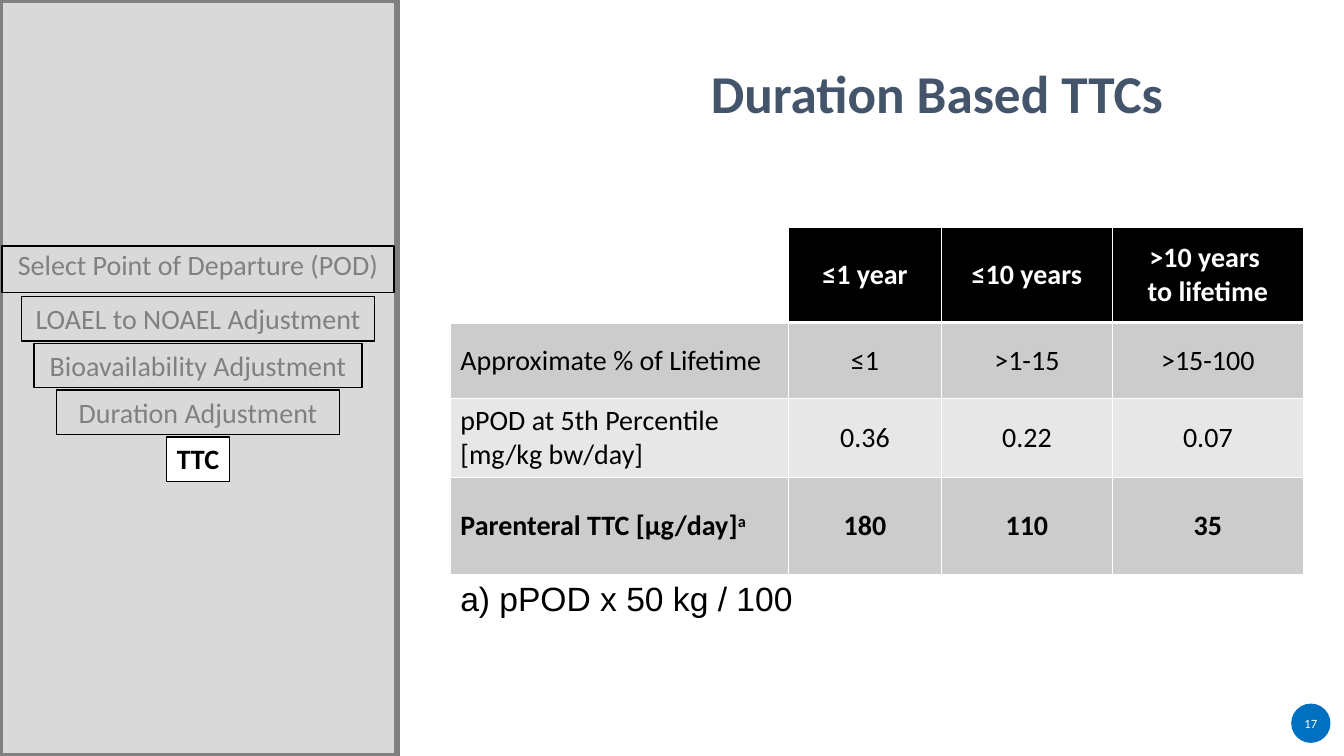
"""Build the slide on duration based TTCs with its step sidebar and table."""
import dataclasses

import lxml.etree
import pptx
import pptx.dml.color
import pptx.enum.shapes
import pptx.enum.text
import pptx.oxml.ns
import pptx.util

Cm = pptx.util.Cm
Pt = pptx.util.Pt
SHAPES = pptx.enum.shapes.MSO_SHAPE
ALIGN = pptx.enum.text.PP_ALIGN
ANCHOR = pptx.enum.text.MSO_ANCHOR


@dataclasses.dataclass(frozen=True)
class Theme:
    font: str = "Calibri"
    note_font: str = "Arial"
    title_size: float = 38
    text_size: float = 20
    note_size: float = 24
    badge_size: float = 9
    title: str = "44546A"
    badge: str = "0070C0"
    sidebar: str = "D9D9D9"
    muted: str = "808080"
    black: str = "000000"
    white: str = "FFFFFF"
    bands: tuple = ("CCCCCC", "E7E7E7")


THEME = Theme()
SIDEBAR_CENTRE = 4.99
FIRST_STEP = ("Select Point of Departure (POD)", 9.88)
LATER_STEPS = [
    ("LOAEL to NOAEL Adjustment", 8.89),
    ("Bioavailability Adjustment", 8.26),
    ("Duration Adjustment", 7.14),
]
COLUMN_WIDTHS = [8.53, 3.84, 4.32, 4.8]
ROW_HEIGHTS = [2.39, 1.91, 1.94, 2.46]
ROWS = [
    ["", "≤1 year", "≤10 years", ">10 years \vto lifetime"],
    ["Approximate % of Lifetime", "≤1", ">1-15", ">15-100"],
    ["pPOD at 5th Percentile \v[mg/kg bw/day]", "0.36", "0.22", "0.07"],
    ["Parenteral TTC [µg/day]", "180", "110", "35"],
]


def rgb(value):
    return pptx.dml.color.RGBColor.from_string(value)


def style_text(frame, size, color, bold=False, align=ALIGN.CENTER, font=THEME.font):
    for para in frame.paragraphs:
        para.alignment = align
        for span in para.runs:
            span.font.name = font
            span.font.size = Pt(size)
            span.font.bold = bold
            span.font.color.rgb = rgb(color)


def add_box(page, kind, left, top, width, height, fill=None, line=None, line_width=1):
    box = page.shapes.add_shape(kind, Cm(left), Cm(top), Cm(width), Cm(height))
    box.shadow.inherit = False
    if fill:
        box.fill.solid()
        box.fill.fore_color.rgb = rgb(fill)
    else:
        box.fill.background()
    if line:
        box.line.color.rgb = rgb(line)
        box.line.width = Pt(line_width)
    else:
        box.line.fill.background()
    return box


def add_step(page, text, width, top, height=1.12, current=False):
    box = add_box(page, SHAPES.RECTANGLE, SIDEBAR_CENTRE - width / 2, top, width,
                  height, THEME.white if current else None, THEME.black)
    frame = box.text_frame
    frame.text = text
    frame.word_wrap = False
    frame.vertical_anchor = ANCHOR.TOP
    style_text(frame, THEME.text_size, THEME.black if current else THEME.muted, current)
    return box


def add_sidebar(page):
    add_box(page, SHAPES.RECTANGLE, 0, 0, 10.01, 19.05, THEME.sidebar, THEME.muted, 4.5)
    first = add_step(page, *FIRST_STEP, top=6.2, height=1.17)
    first.text_frame.paragraphs[0].line_spacing = 0.9
    top, pitch = 7.47, 1.18
    for index, (text, width) in enumerate(LATER_STEPS):
        add_step(page, text, width, top + index * pitch)
    add_step(page, "TTC", 1.58, top + len(LATER_STEPS) * pitch, current=True)


def add_title(page, text):
    title = page.shapes.title
    title.left, title.top, title.width, title.height = Cm(17.75), Cm(1.57), Cm(12.29), Cm(1.8)
    frame = title.text_frame
    frame.text = text
    frame.auto_size = pptx.enum.text.MSO_AUTO_SIZE.NONE
    frame.word_wrap = True
    frame.vertical_anchor = ANCHOR.TOP
    frame.margin_left = 0
    frame.paragraphs[0].line_spacing = 0.9
    style_text(frame, THEME.title_size, THEME.title, True)


def add_borders(cell, widths):
    properties = cell._tc.get_or_add_tcPr()
    for side, width in zip("LRTB", widths):
        line = lxml.etree.SubElement(properties, pptx.oxml.ns.qn(f"a:ln{side}"), w=str(Pt(width)))
        fill = lxml.etree.SubElement(line, pptx.oxml.ns.qn("a:solidFill"))
        lxml.etree.SubElement(fill, pptx.oxml.ns.qn("a:srgbClr"), val=THEME.white)


def fill_cell(cell, text, row, column):
    header = row == 0
    add_borders(cell, (1, 1, 3 if row == 1 else 1, 3 if header else 1))
    cell.vertical_anchor = ANCHOR.MIDDLE
    if not text:
        cell.fill.background()
        return
    cell.fill.solid()
    cell.fill.fore_color.rgb = rgb(THEME.black if header else THEME.bands[(row - 1) % 2])
    cell.text_frame.text = text
    last = row == len(ROWS) - 1
    if last and column == 0:
        mark = cell.text_frame.paragraphs[0].add_run()
        mark.text = "a"
        mark.font._element.set("baseline", "30000")
    style_text(cell.text_frame, THEME.text_size, THEME.white if header else THEME.black,
               header or last, ALIGN.CENTER if column else ALIGN.LEFT)


def add_ttc_table(page):
    table = page.shapes.add_table(
        len(ROWS), len(COLUMN_WIDTHS), Cm(11.35), Cm(5.74),
        Cm(sum(COLUMN_WIDTHS)), Cm(sum(ROW_HEIGHTS))).table
    table.first_row = table.horz_banding = False
    for column, width in zip(table.columns, COLUMN_WIDTHS):
        column.width = Cm(width)
    for index, (height, texts) in enumerate(zip(ROW_HEIGHTS, ROWS)):
        table.rows[index].height = Cm(height)
        for column, text in enumerate(texts):
            fill_cell(table.cell(index, column), text, index, column)


def add_footnote(page, text):
    box = page.shapes.add_textbox(Cm(11.35), Cm(14.45), Cm(9.27), Cm(1.27))
    box.text_frame.word_wrap = True
    box.text_frame.text = text
    style_text(box.text_frame, THEME.note_size, THEME.black, align=ALIGN.LEFT,
               font=THEME.note_font)


def add_page_badge(page, number):
    badge = add_box(page, SHAPES.OVAL, 32.54, 17.73, 0.99, 0.99, THEME.badge)
    badge.text_frame.text = number
    badge.text_frame.word_wrap = False
    badge.text_frame.vertical_anchor = ANCHOR.MIDDLE
    style_text(badge.text_frame, THEME.badge_size, THEME.white)


def main():
    deck = pptx.Presentation()
    deck.slide_width, deck.slide_height = Cm(33.87), Cm(19.05)
    page = deck.slides.add_slide(deck.slide_layouts.get_by_name("Title Only"))
    add_page_badge(page, "17")
    add_title(page, "Duration Based TTCs ")
    add_ttc_table(page)
    add_footnote(page, "a) pPOD x 50 kg / 100")
    add_sidebar(page)
    deck.save("out.pptx")


if __name__ == "__main__":
    main()
